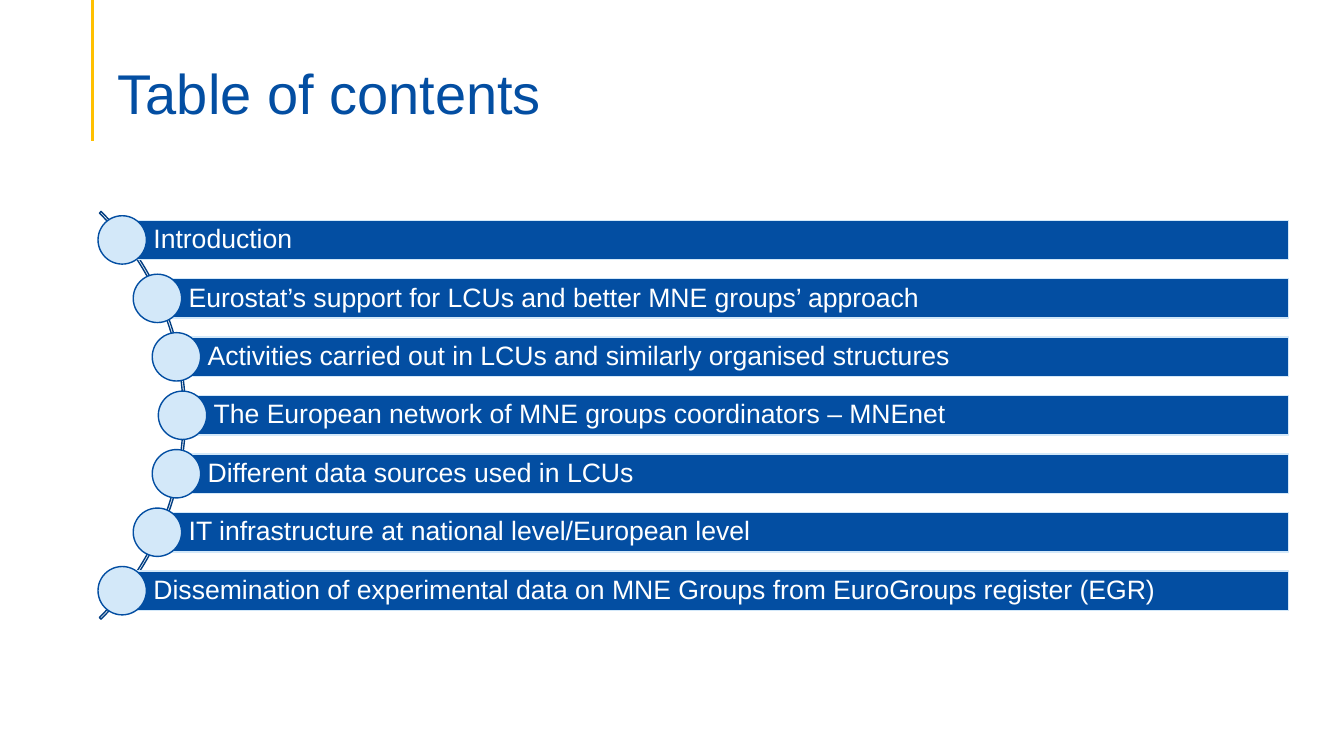
from math import sqrt

from lxml.etree import SubElement
from pptx import Presentation
from pptx.dml.color import RGBColor
from pptx.enum.shapes import MSO_CONNECTOR, MSO_SHAPE
from pptx.enum.text import MSO_ANCHOR, PP_ALIGN
from pptx.oxml.ns import qn
from pptx.util import Inches, Pt

BLUE, PALE, WHITE = "034EA2", "D3E8F9", "FFFFFF"
TOPICS = [
    "Introduction",
    "Eurostat’s support for LCUs and better MNE groups’ approach",
    "Activities carried out in LCUs and similarly organised structures",
    "The European network of MNE groups coordinators – MNEnet",
    "Different data sources used in LCUs",
    "IT infrastructure at national level/European level",
    "Dissemination of experimental data on MNE Groups from EuroGroups register (EGR)",
]

# The dots sit on a circle whose centre lies left of the slide
CENTRE_X, CENTRE_Y = -1.02, 4.12
ARC_R, DOT_R = 2.86, 2.83
PITCH, BAR_H, DOT = 0.58, 0.39, 0.48
BAR_RIGHT = 12.78


def add_shape(kind, x, y, w, h, fill, line):
    sp = s.shapes.add_shape(kind, Inches(x), Inches(y), Inches(w), Inches(h))
    sp.shadow.inherit = False
    if fill:
        sp.fill.solid()
        sp.fill.fore_color.rgb = RGBColor.from_string(fill)
    else:
        sp.fill.background()
    sp.line.color.rgb = RGBColor.from_string(line)
    sp.line.width = Pt(1)
    return sp


def set_text(sp, text, size, color, anchor, insets):
    tf = sp.text_frame
    tf.word_wrap = True
    tf.vertical_anchor = anchor
    tf.margin_left, tf.margin_top, tf.margin_right, tf.margin_bottom = map(Inches, insets)
    p = tf.paragraphs[0]
    p.text = text
    p.alignment = PP_ALIGN.LEFT
    p.line_spacing = 0.9
    p.font.name = "Arial"
    p.font.size = Pt(size)
    p.font.color.rgb = RGBColor.from_string(color)


prs = Presentation()
prs.slide_width, prs.slide_height = Inches(13.33), Inches(7.5)
s = prs.slides.add_slide(prs.slide_layouts[6])

# Accent line and title
accent = s.shapes.add_connector(
    MSO_CONNECTOR.STRAIGHT, Inches(0.92), 0, Inches(0.92), Inches(1.4))
accent.line.color.rgb = RGBColor.from_string("FFC000")
accent.line.width = Pt(2.25)
SubElement(accent.line._get_or_add_ln().getparent(), qn("a:effectLst"))

title = s.shapes.add_textbox(Inches(1.07), Inches(0.4), Inches(11.5), Inches(0.86))
set_text(title, "Table of contents", 40, BLUE, MSO_ANCHOR.BOTTOM, (0.1, 0.05, 0.1, 0))

# Arc behind the list
arc = add_shape(MSO_SHAPE.BLOCK_ARC, CENTRE_X - ARC_R, CENTRE_Y - ARC_R,
                2 * ARC_R, 2 * ARC_R, None, "023E82")
for i, value in enumerate((189, 27, 0.004)):
    arc.adjustments[i] = value

# One bar and one dot per topic
for i, topic in enumerate(TOPICS):
    dy = (i - (len(TOPICS) - 1) / 2) * PITCH
    x, y = CENTRE_X + sqrt(DOT_R ** 2 - dy ** 2), CENTRE_Y + dy
    bar = add_shape(MSO_SHAPE.RECTANGLE, x, y - BAR_H / 2, BAR_RIGHT - x, BAR_H, BLUE, PALE)
    set_text(bar, topic, 19, WHITE, MSO_ANCHOR.MIDDLE, (0.31, 0.05, 0.05, 0.05))
    add_shape(MSO_SHAPE.OVAL, x - DOT / 2, y - DOT / 2, DOT, DOT, PALE, BLUE)

prs.save("out.pptx")
